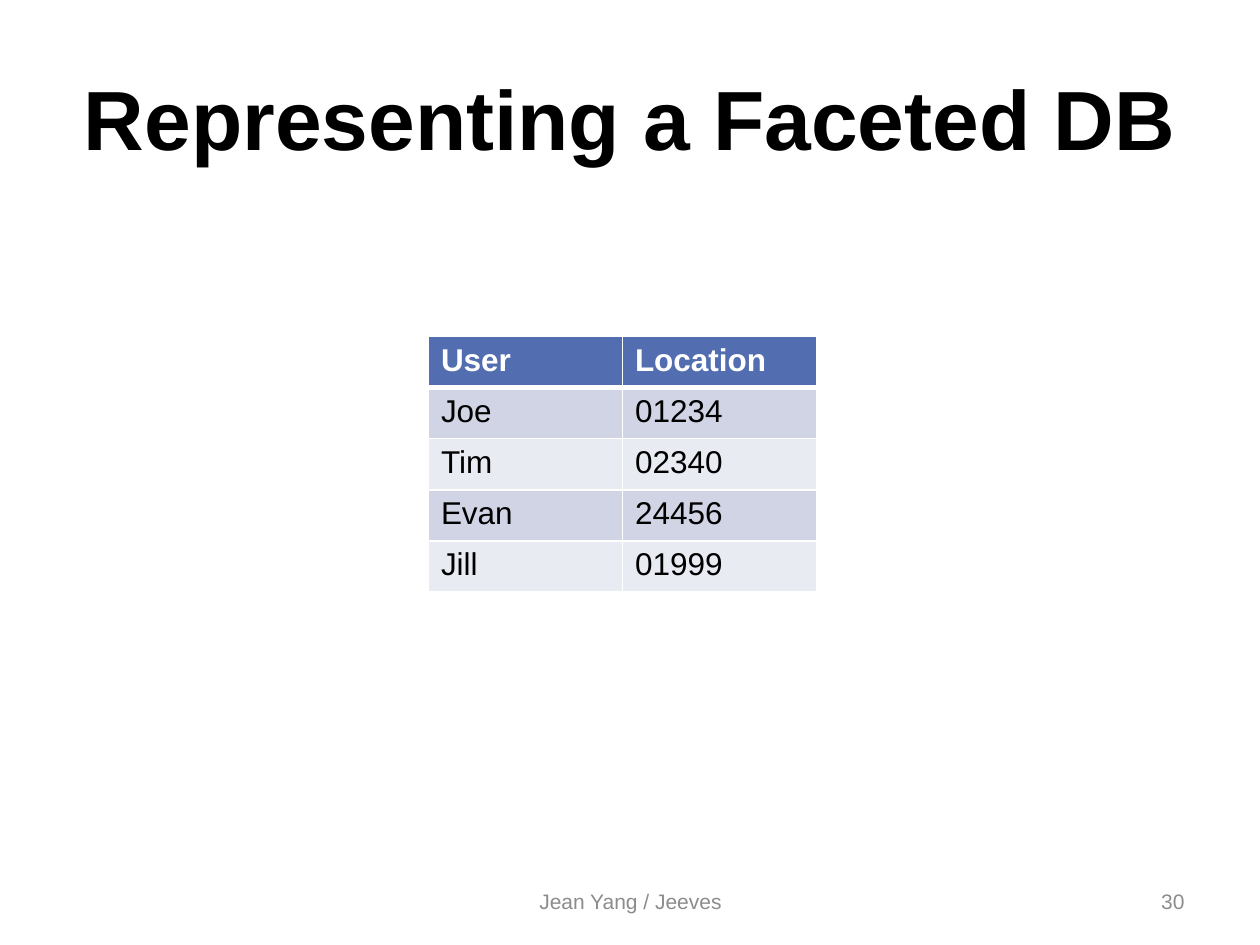
from dataclasses import dataclass

from lxml import etree
from pptx import Presentation
from pptx.dml.color import RGBColor
from pptx.enum.text import MSO_ANCHOR, PP_ALIGN
from pptx.oxml.ns import qn
from pptx.util import Inches, Pt

CENTER, RIGHT, LEFT = PP_ALIGN.CENTER, PP_ALIGN.RIGHT, PP_ALIGN.LEFT
MIDDLE = MSO_ANCHOR.MIDDLE
TITLE_ONLY = 5
SLIDE_WIDTH, SLIDE_HEIGHT = Inches(10), Inches(7.5)


@dataclass(frozen=True)
class Theme:
    font: str = "Arial"
    ink: str = "000000"
    paper: str = "FFFFFF"
    muted: str = "8C8C8C"
    header: str = "526DB0"
    bands: tuple = ("D1D4E4", "E9EBF2")
    title_size: int = 48
    table_size: int = 18
    footer_size: int = 12
    thin_line: int = 1
    thick_line: int = 3


class SlideBuilder:
    """Holds the theme and the current slide; the grid is 100 by 75 units."""

    COLUMNS, ROWS = 100, 75

    def __init__(self, slide, theme):
        self.slide = slide
        self.theme = theme
        background = slide.background.fill
        background.solid()
        background.fore_color.rgb = RGBColor.from_string(theme.paper)

    def box(self, left, top, width, height):
        column, row = SLIDE_WIDTH / self.COLUMNS, SLIDE_HEIGHT / self.ROWS
        return (round(left * column), round(top * row),
                round(width * column), round(height * row))

    def set_text(self, frame, text, size, color, align=LEFT, bold=False):
        frame.text = text
        paragraph = frame.paragraphs[0]
        paragraph.alignment = align
        font = paragraph.font
        font.name, font.size, font.bold = self.theme.font, Pt(size), bold
        font.color.rgb = RGBColor.from_string(color)

    def title(self, text, *area):
        shape = self.slide.shapes.title
        shape.left, shape.top, shape.width, shape.height = self.box(*area)
        shape.text_frame.vertical_anchor = MIDDLE
        self.set_text(shape.text_frame, text, self.theme.title_size,
                      self.theme.ink, CENTER, bold=True)

    def footer(self, text, align, *area):
        frame = self.slide.shapes.add_textbox(*self.box(*area)).text_frame
        frame.word_wrap = True
        frame.vertical_anchor = MIDDLE
        self.set_text(frame, text, self.theme.footer_size, self.theme.muted, align)

    def borders(self, cell, top, bottom):
        thin = self.theme.thin_line
        properties = cell._tc.get_or_add_tcPr()
        sides = (("L", thin), ("R", thin), ("T", top), ("B", bottom))
        for position, (side, width) in enumerate(sides):
            line = etree.Element(qn(f"a:ln{side}"), w=str(Pt(width)))
            fill = etree.SubElement(line, qn("a:solidFill"))
            etree.SubElement(fill, qn("a:srgbClr"), val=self.theme.paper)
            properties.insert(position, line)  # borders precede the fill

    def table(self, records, *area):
        theme = self.theme
        left, top, width, height = self.box(*area)
        table = self.slide.shapes.add_table(
            len(records), len(records[0]), left, top, width, height).table
        for column in table.columns:
            column.width = width // len(records[0])
        for row_number, record in enumerate(records):
            table.rows[row_number].height = height // len(records)
            is_header = row_number == 0
            fill = theme.header if is_header else theme.bands[(row_number - 1) % 2]
            for column_number, text in enumerate(record):
                cell = table.cell(row_number, column_number)
                cell.fill.solid()
                cell.fill.fore_color.rgb = RGBColor.from_string(fill)
                self.set_text(cell.text_frame, text, theme.table_size,
                              theme.paper if is_header else theme.ink, bold=is_header)
                # The thick rule lies between the header and the first record
                self.borders(cell,
                             theme.thick_line if row_number == 1 else theme.thin_line,
                             theme.thick_line if is_header else theme.thin_line)


def main():
    presentation = Presentation()
    presentation.slide_width, presentation.slide_height = SLIDE_WIDTH, SLIDE_HEIGHT
    slide = presentation.slides.add_slide(presentation.slide_layouts[TITLE_ONLY])
    builder = SlideBuilder(slide, Theme())

    # Title
    builder.title("Representing a Faceted DB", 5, 3, 90, 12.5)

    # Footer
    builder.footer("Jean Yang / Jeeves", CENTER, 34.2, 69.5, 31.7, 4)
    builder.footer("30", RIGHT, 71.7, 69.5, 23.3, 4)

    # Users and their locations
    builder.table([
        ("User", "Location"),
        ("Joe", "01234"),
        ("Tim", "02340"),
        ("Evan", "24456"),
        ("Jill", "01999"),
    ], 34, 26.7, 30.8, 20.3)

    presentation.save("out.pptx")


if __name__ == "__main__":
    main()
